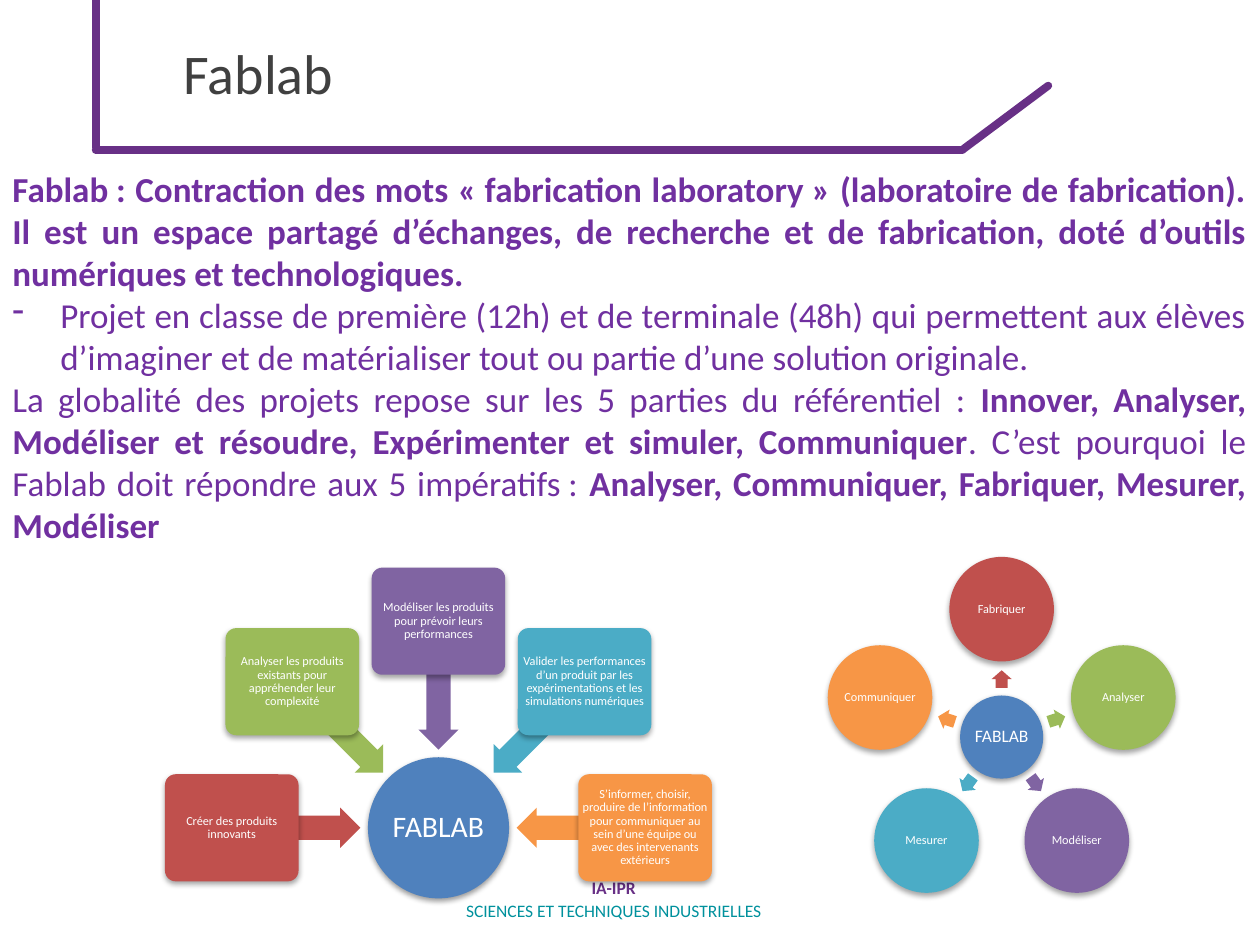
from dataclasses import dataclass
from math import cos, radians, sin

from lxml.etree import SubElement
from pptx import Presentation
from pptx.dml.color import RGBColor
from pptx.enum.shapes import MSO_CONNECTOR, MSO_SHAPE
from pptx.enum.text import MSO_ANCHOR, PP_ALIGN
from pptx.oxml.ns import qn
from pptx.util import Emu, Inches, Pt


@dataclass(frozen=True)
class Theme:
    font: str = "Calibri"
    frame: str = "683086"
    title: str = "404040"
    body: str = "7030A0"
    teal: str = "00919D"
    white: str = "FFFFFF"
    hub: str = "4F81BD"
    accents: tuple = ("C0504D", "9BBB59", "8064A2", "4BACC6", "F79646")
    title_size: float = 32
    body_size: float = 20
    footer_size: float = 10
    label_size: float = 7


@dataclass(frozen=True)
class Run:
    text: str
    bold: bool = False


@dataclass(frozen=True)
class RadialDiagram:
    """Satellites placed clockwise around a hub, each with an arrow; lengths in inches."""
    center: tuple[float, float]
    hub_diameter: float
    hub_size: float
    labels: tuple[str, ...]
    first_angle: float
    step: float
    radius: float
    arrow_radius: float
    satellite_shape: MSO_SHAPE
    satellite_size: tuple[float, float]
    arrow_shape: MSO_SHAPE
    arrow_size: tuple[float, float]


THEME = Theme()

INPUTS = RadialDiagram(
    center=(3.48, 6.57), hub_diameter=1.12, hub_size=17,
    labels=(
        "Créer des produits innovants",
        "Analyser les produits existants pour appréhender leur complexité",
        "Modéliser les produits pour prévoir leurs performances",
        "Valider les performances d’un produit par les expérimentations et les "
        "simulations numériques",
        "S’informer, choisir, produire de l’information pour communiquer au sein "
        "d’une équipe ou avec des intervenants extérieurs",
    ),
    first_angle=180, step=45, radius=1.64, arrow_radius=1.13,
    satellite_shape=MSO_SHAPE.ROUNDED_RECTANGLE, satellite_size=(1.06, 0.85),
    arrow_shape=MSO_SHAPE.LEFT_ARROW, arrow_size=(1.02, 0.32),
)
IMPERATIVES = RadialDiagram(
    center=(7.95, 5.85), hub_diameter=0.66, hub_size=10,
    labels=("Fabriquer", "Analyser", "Modéliser", "Mesurer", "Communiquer"),
    first_angle=270, step=72, radius=1.015, arrow_radius=0.46,
    satellite_shape=MSO_SHAPE.OVAL, satellite_size=(0.83, 0.83),
    arrow_shape=MSO_SHAPE.RIGHT_ARROW, arrow_size=(0.14, 0.16),
)

DEFINITION = [Run(
    "Fablab\u00a0: Contraction des mots «\u00a0fabrication laboratory\u00a0» (laboratoire de "
    "fabrication). Il est un espace partagé d’échanges, de recherche et de "
    "fabrication, doté d’outils numériques et technologiques.", True)]
PROJECT = [Run(
    "Projet en classe de première (12h) et de terminale (48h) qui permettent aux "
    "élèves d’imaginer et de matérialiser tout ou partie d’une solution originale.")]
SKILLS = [
    Run("La globalité des projets repose sur les 5 parties du référentiel : "),
    Run("Innover, Analyser, Modéliser et résoudre, Expérimenter et simuler, "
        "Communiquer", True),
    Run(". C’est pourquoi le Fablab doit répondre aux 5 impératifs\u00a0: "),
    Run("Analyser, Communiquer, Fabriquer, Mesurer, Modéliser", True),
]


def style_font(font, size: float, color: str, bold: bool = False) -> None:
    font.name = THEME.font
    font.size = Pt(size)
    font.bold = bold
    font.color.rgb = RGBColor.from_string(color)


def add_text_box(slide, left: float, top: float, width: float, height: float, anchor):
    box = slide.shapes.add_textbox(Inches(left), Inches(top), Inches(width), Inches(height))
    box.text_frame.word_wrap = True
    box.text_frame.vertical_anchor = anchor
    return box.text_frame


def add_frame_line(slide, start: tuple[float, float], end: tuple[float, float]) -> None:
    line = slide.shapes.add_connector(
        MSO_CONNECTOR.STRAIGHT, *(Inches(value) for value in start + end))
    line.line.width = Pt(4.5)
    line.line.color.rgb = RGBColor.from_string(THEME.frame)
    line.line._get_or_add_ln().set("cap", "rnd")
    SubElement(line._element.spPr, qn("a:effectLst"))


def add_centered_shape(group, kind, center: tuple[float, float],
                       size: tuple[float, float], color: str):
    (x, y), (width, height) = center, size
    shape = group.shapes.add_shape(kind, Inches(x - width / 2), Inches(y - height / 2),
                                   Inches(width), Inches(height))
    shape.fill.solid()
    shape.fill.fore_color.rgb = RGBColor.from_string(color)
    shape.line.fill.background()
    shape.shadow.inherit = False
    return shape


def add_shadow(shape, distance: Emu, opacity: int) -> None:
    effects = shape._element.spPr.find(qn("a:effectLst"))
    shadow = SubElement(effects, qn("a:outerShdw"), blurRad="40000", dist=str(distance),
                        dir="5400000", rotWithShape="0")
    color = SubElement(shadow, qn("a:srgbClr"), val="000000")
    SubElement(color, qn("a:alpha"), val=str(opacity * 1000))


def add_label(shape, text: str, size: float) -> None:
    frame = shape.text_frame
    frame.word_wrap = True
    frame.vertical_anchor = MSO_ANCHOR.MIDDLE
    frame.margin_left = frame.margin_right = Inches(0.01)
    frame.margin_top = frame.margin_bottom = Inches(0.01)
    frame.text = text
    paragraph = frame.paragraphs[0]
    paragraph.alignment = PP_ALIGN.CENTER
    paragraph.line_spacing = 0.9
    style_font(paragraph.runs[0].font, size, THEME.white)


def add_radial_diagram(slide, diagram: RadialDiagram) -> None:
    group = slide.shapes.add_group_shape()
    hub = add_centered_shape(group, MSO_SHAPE.OVAL, diagram.center,
                             (diagram.hub_diameter,) * 2, THEME.hub)
    add_shadow(hub, Emu(20000), 38)
    add_label(hub, "FABLAB", diagram.hub_size)

    def point_at(angle: float, radius: float) -> tuple[float, float]:
        x, y = diagram.center
        return x + radius * cos(radians(angle)), y + radius * sin(radians(angle))

    for index, (label, color) in enumerate(zip(diagram.labels, THEME.accents)):
        angle = (diagram.first_angle + index * diagram.step) % 360
        arrow = add_centered_shape(group, diagram.arrow_shape,
                                   point_at(angle, diagram.arrow_radius),
                                   diagram.arrow_size, color)
        arrow.adjustments[0] = 0.6
        arrow.adjustments[1] = 0.5
        arrow.rotation = angle
        satellite = add_centered_shape(group, diagram.satellite_shape,
                                       point_at(angle, diagram.radius),
                                       diagram.satellite_size, color)
        if diagram.satellite_shape == MSO_SHAPE.ROUNDED_RECTANGLE:
            satellite.adjustments[0] = 0.1
        add_shadow(satellite, Emu(23000), 35)
        add_label(satellite, label, THEME.label_size)


def add_body(slide) -> None:
    frame = add_text_box(slide, 0, 1.28, 9.99, 3.13, MSO_ANCHOR.TOP)
    for index, runs in enumerate((DEFINITION, PROJECT, SKILLS)):
        paragraph = frame.add_paragraph() if index else frame.paragraphs[0]
        paragraph.alignment = PP_ALIGN.JUSTIFY
        if runs is PROJECT:
            properties = paragraph._p.get_or_add_pPr()
            properties.set("marL", str(Inches(0.38)))
            properties.set("indent", str(-Inches(0.38)))
            SubElement(properties, qn("a:buChar"), char="-")
        for content in runs:
            run = paragraph.add_run()
            run.text = content.text
            style_font(run.font, THEME.body_size, THEME.body, content.bold)


def add_footer(slide) -> None:
    frame = add_text_box(slide, 3.56, 6.76, 2.62, 0.74, MSO_ANCHOR.MIDDLE)
    frame.text = "IA-IPR\nSCIENCES ET TECHNIQUES INDUSTRIELLES"
    styles = ((THEME.frame, True), (THEME.teal, False))
    for paragraph, (color, bold) in zip(frame.paragraphs, styles):
        paragraph.alignment = PP_ALIGN.CENTER
        paragraph.line_spacing = Pt(13.2)
        style_font(paragraph.runs[0].font, THEME.footer_size, color, bold)


def main() -> None:
    presentation = Presentation()
    presentation.slide_width, presentation.slide_height = Inches(10), Inches(7.5)
    slide = presentation.slides.add_slide(presentation.slide_layouts[6])
    add_frame_line(slide, (0.76, 1.19), (7.64, 1.19))
    add_frame_line(slide, (7.65, 1.18), (8.32, 0.68))
    add_frame_line(slide, (0.76, 1.17), (0.76, 0))
    add_footer(slide)
    title = add_text_box(slide, 1.36, 0, 8.63, 1.15, MSO_ANCHOR.MIDDLE)
    title.text = "Fablab"
    style_font(title.paragraphs[0].runs[0].font, THEME.title_size, THEME.title)
    add_body(slide)
    for diagram in (INPUTS, IMPERATIVES):
        add_radial_diagram(slide, diagram)
    presentation.save("out.pptx")


if __name__ == "__main__":
    main()
